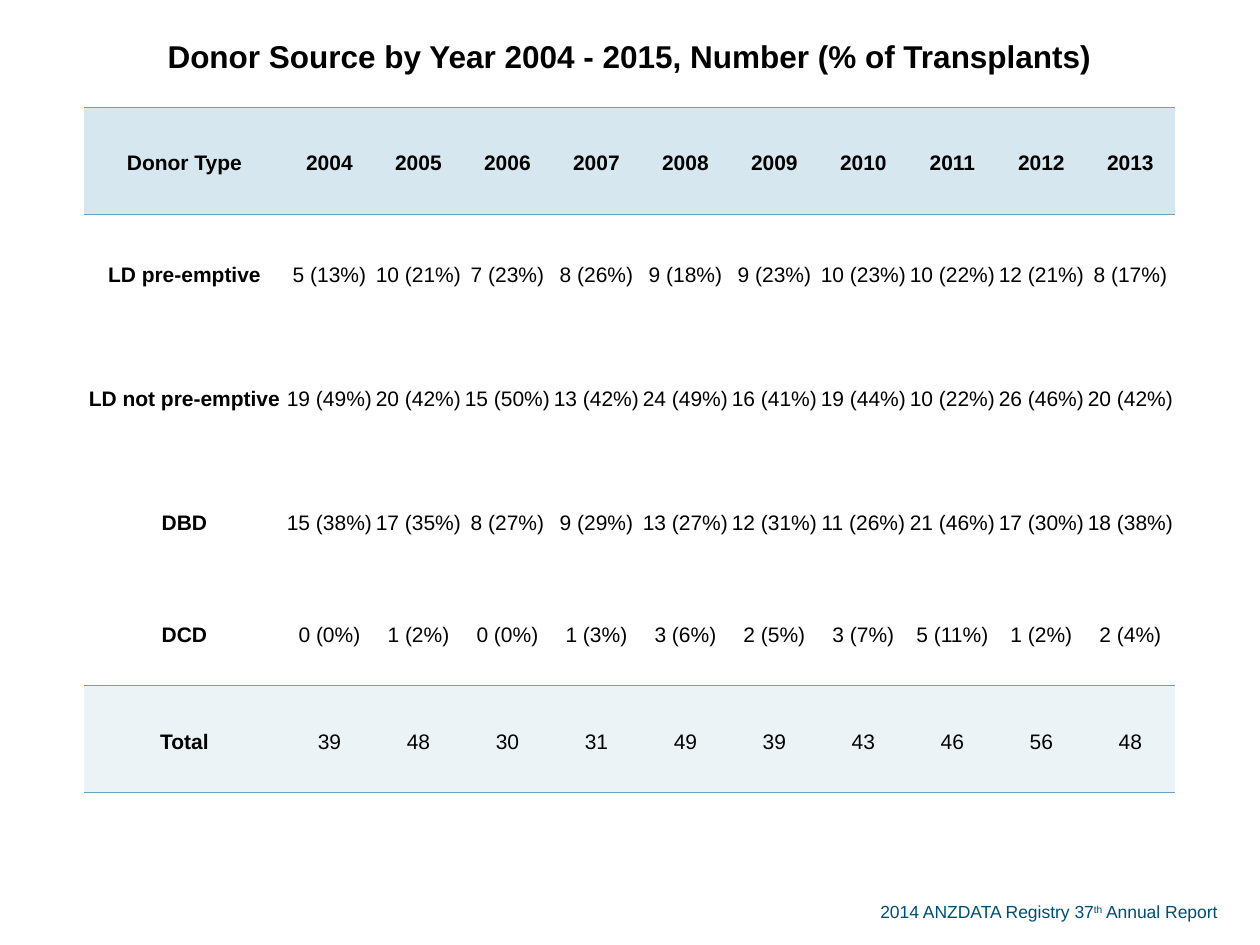
"""Build a slide with a table of donor sources by year."""
from lxml.etree import SubElement
from pptx import Presentation
from pptx.dml.color import RGBColor
from pptx.enum.text import MSO_ANCHOR, MSO_AUTO_SIZE, PP_ALIGN
from pptx.oxml.ns import qn
from pptx.util import Pt

PX = 914400 // 126
FONT = "Arial"
BLACK, NAVY, RULE = "000000", "004D73", "66A3C2"

TITLE = "Donor Source by Year 2004 - 2015, Number (% of Transplants)"
HEADER = ["Donor Type"] + [str(year) for year in range(2004, 2014)]
DONORS = [
    ["LD pre-emptive", "5 (13%)", "10 (21%)", "7 (23%)", "8 (26%)", "9 (18%)",
     "9 (23%)", "10 (23%)", "10 (22%)", "12 (21%)", "8 (17%)"],
    ["LD not pre-emptive", "19 (49%)", "20 (42%)", "15 (50%)", "13 (42%)", "24 (49%)",
     "16 (41%)", "19 (44%)", "10 (22%)", "26 (46%)", "20 (42%)"],
    ["DBD", "15 (38%)", "17 (35%)", "8 (27%)", "9 (29%)", "13 (27%)",
     "12 (31%)", "11 (26%)", "21 (46%)", "17 (30%)", "18 (38%)"],
    ["DCD", "0 (0%)", "1 (2%)", "0 (0%)", "1 (3%)", "3 (6%)",
     "2 (5%)", "3 (7%)", "5 (11%)", "1 (2%)", "2 (4%)"],
]
TOTAL = ["Total", "39", "48", "30", "31", "49", "39", "43", "46", "56", "48"]
ROWS = [[TITLE] + [""] * 10, HEADER, *DONORS, TOTAL]
ROW_HEIGHTS = [107, 107, 117, 131, 117, 107, 107]
COLUMN_WIDTHS = [201] + [89] * 10
ROW_FILLS = {1: "D7E7EF", 6: "EBF3F7"}
RULES_BELOW = {0, 1, 5, 6}
FOOTER = [("2014 ANZDATA Registry 37", 0), ("th", 30000), (" Annual Report", 0)]


def color(value):
    return RGBColor.from_string(value)


def style_font(font, size, value, bold=False):
    font.name, font.size, font.bold = FONT, Pt(size), bold
    font.color.rgb = color(value)


def set_borders(cell, top, bottom):
    properties = cell._tc.get_or_add_tcPr()
    for side, ruled in (("L", False), ("R", False), ("T", top), ("B", bottom)):
        border = SubElement(properties, qn(f"a:ln{side}"), w=str(Pt(0.5)))
        if ruled:
            paint = SubElement(border, qn("a:solidFill"))
            SubElement(paint, qn("a:srgbClr"), val=RULE)
        else:
            SubElement(border, qn("a:noFill"))


def format_cell(cell, row, column, wording):
    set_borders(cell, row - 1 in RULES_BELOW, row in RULES_BELOW)
    if row in ROW_FILLS:
        cell.fill.solid()
        cell.fill.fore_color.rgb = color(ROW_FILLS[row])
    else:
        cell.fill.background()
    cell.margin_left = cell.margin_right = cell.margin_top = PX
    cell.margin_bottom = 0
    cell.vertical_anchor = MSO_ANCHOR.MIDDLE
    paragraph = cell.text_frame.paragraphs[0]
    paragraph.text = wording
    paragraph.alignment = PP_ALIGN.CENTER
    paragraph.line_spacing = 1.19
    paragraph.space_after = Pt(14)
    style_font(paragraph.font, 18 if row == 0 else 12, BLACK, row < 2 or column == 0)


def add_donor_table(slide):
    table = slide.shapes.add_table(
        len(ROWS), len(HEADER), 84 * PX, 0,
        sum(COLUMN_WIDTHS) * PX, sum(ROW_HEIGHTS) * PX).table
    table.first_row = table.horz_banding = False
    for column, width in zip(table.columns, COLUMN_WIDTHS):
        column.width = width * PX
    for row, height in zip(table.rows, ROW_HEIGHTS):
        row.height = height * PX
    for r, wordings in enumerate(ROWS):
        for c, wording in enumerate(wordings):
            format_cell(table.cell(r, c), r, c, wording)
    table.cell(0, 0).merge(table.cell(0, len(HEADER) - 1))


def add_footer(slide):
    frame = slide.shapes.add_textbox(868 * PX, 895 * PX, 377 * PX, 34 * PX).text_frame
    frame.word_wrap = True
    frame.auto_size = MSO_AUTO_SIZE.SHAPE_TO_FIT_TEXT
    paragraph = frame.paragraphs[0]
    style_font(paragraph.font, 10, NAVY)
    for wording, baseline in FOOTER:
        run = paragraph.add_run()
        run.text = wording
        if baseline:
            run.font._element.set("baseline", str(baseline))


def main():
    deck = Presentation()
    deck.slide_width, deck.slide_height = 1260 * PX, 945 * PX
    slide = deck.slides.add_slide(deck.slide_layouts[6])
    add_footer(slide)
    add_donor_table(slide)
    deck.save("out.pptx")


if __name__ == "__main__":
    main()
